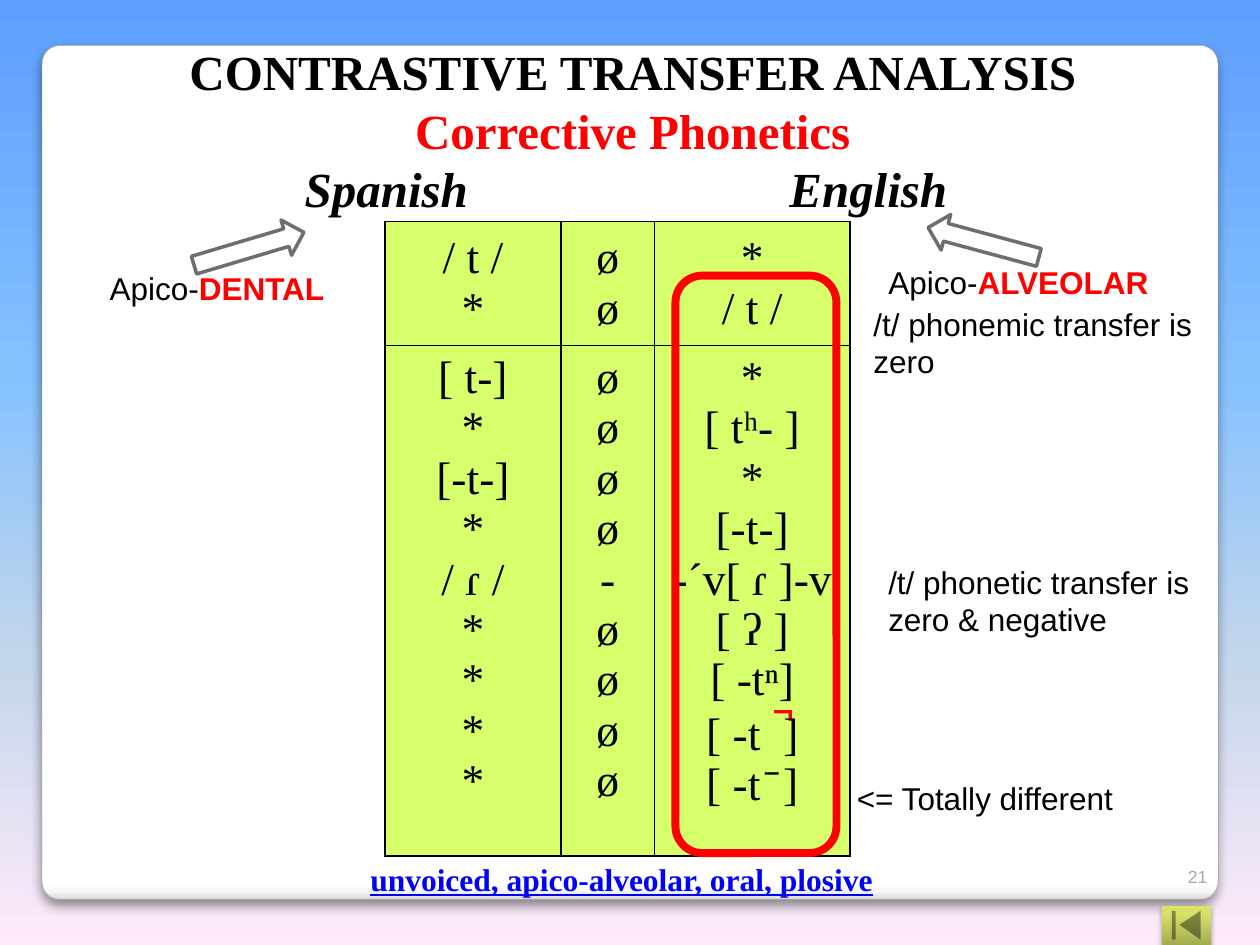
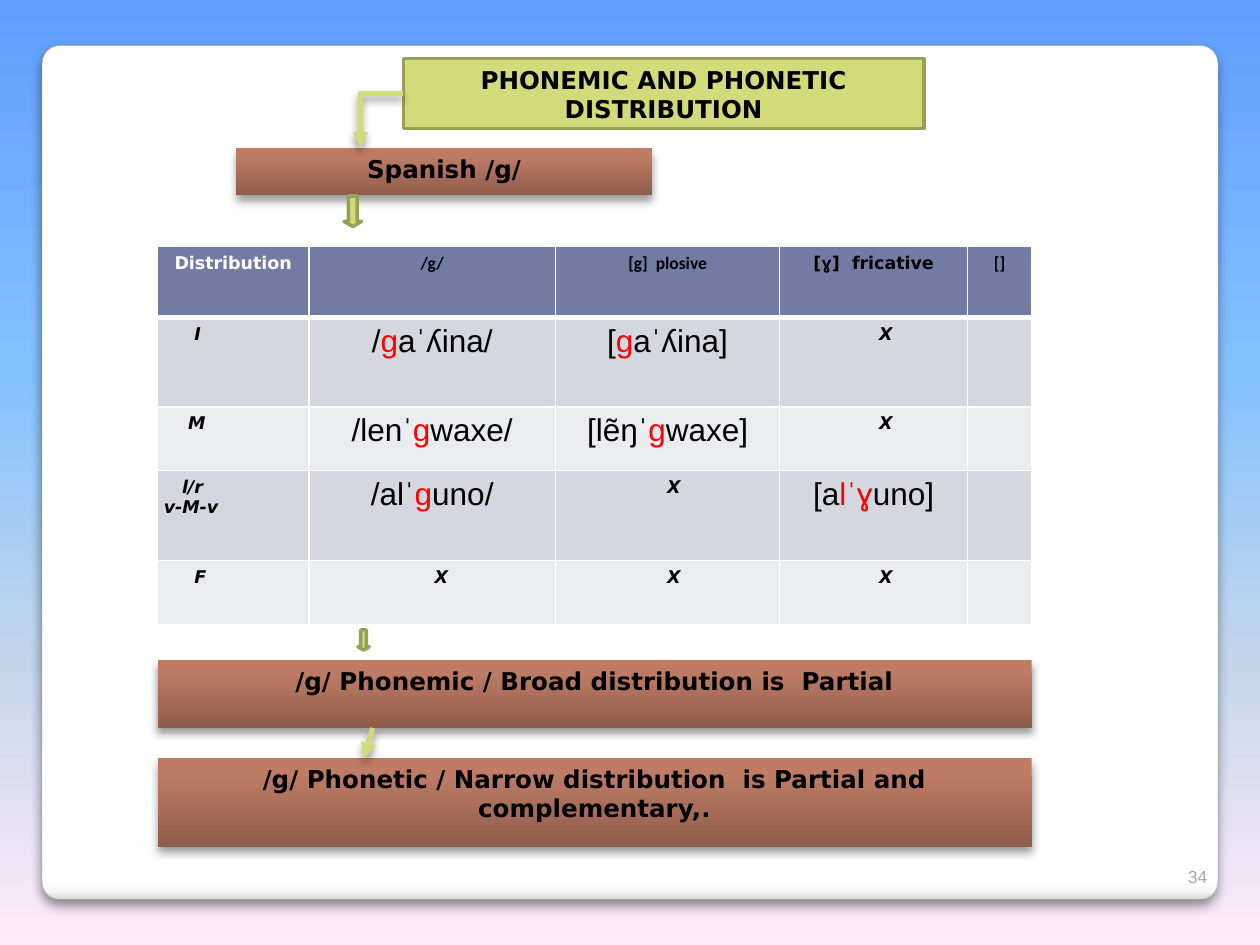
from lxml.etree import SubElement
from pptx import Presentation
from pptx.dml.color import RGBColor
from pptx.enum.shapes import MSO_CONNECTOR, MSO_SHAPE
from pptx.enum.text import MSO_ANCHOR, PP_ALIGN
from pptx.oxml import parse_xml
from pptx.oxml.ns import nsdecls, qn
from pptx.slide import Slide
from pptx.util import Pt

hex_color = RGBColor.from_string
BLACK, WHITE, RED, GRAY = "000000", "FFFFFF", "FF0000", "A1AAAC"
LIME, OLIVE, CELL_GREEN, HEADER_BLUE = "D2DA7A", "999F59", "D7FF6B", "727CA3"
SKY = [(0, "5E9EFF"), (40, "85C2FF"), (70, "C4D6EB"), (100, "FFEBFA")]
CARD = [(0, WHITE), (98, WHITE), (99, "F7F7F7"), (100, "D9D9D9")]
BROWN = [(0, "BF7B63"), (20, "BC7B64"), (100, "8F5D4C")]
BUTTON = [(0, "DAE466"), (20, "D7E168"), (100, "A3AB4F")]
SOFT_SHADOW = (40, 5, 3)
SERIF, SANS, WIDE = "Times New Roman", "Arial", "DejaVu Sans"
LEFT, CENTER, RIGHT = PP_ALIGN.LEFT, PP_ALIGN.CENTER, PP_ALIGN.RIGHT


def paint(target, fill=None, line=None, width=1, shadow=None, arrow=False):
    is_slide = isinstance(target, Slide)
    if isinstance(fill, list):
        fill_format = target.background.fill if is_slide else target.fill
        fill_format.gradient()
        fill_format.gradient_angle = 270
        stops = target.element.xpath(".//a:gsLst")[0]
        stops.clear()
        for position, color in fill:
            stop = SubElement(stops, qn("a:gs"), pos=str(position * 1000))
            SubElement(stop, qn("a:srgbClr"), val=color)
    elif fill:
        target.fill.solid()
        target.fill.fore_color.rgb = hex_color(fill)
    elif hasattr(target, "fill"):
        target.fill.background()
    if is_slide:
        return
    if line:
        target.line.color.rgb = hex_color(line)
        target.line.width = Pt(width)
    else:
        target.line.fill.background()
    properties = target.element.spPr
    if arrow:
        SubElement(properties.find(qn("a:ln")), qn("a:tailEnd"), type="triangle")
    effects = SubElement(properties, qn("a:effectLst"))
    if shadow:
        opacity, blur, distance = shadow
        outer = SubElement(effects, qn("a:outerShdw"), blurRad=str(Pt(blur)), dist=str(Pt(distance)),
                           dir="5400000", algn="t", rotWithShape="0")
        color = SubElement(outer, qn("a:srgbClr"), val=BLACK)
        SubElement(color, qn("a:alpha"), val=str(opacity * 1000))


def write(holder, lines, size, font, color=BLACK, bold=False, italic=False, align=CENTER,
          inset=3.6, anchor=MSO_ANCHOR.TOP, accent_bold=None):
    frame = holder.text_frame
    box = holder if hasattr(holder, "margin_left") else frame
    box.margin_left = box.margin_right = box.margin_top = box.margin_bottom = Pt(inset)
    box.vertical_anchor = anchor
    frame.word_wrap = True
    frame.text = "\n".join(lines)
    for paragraph, line in zip(frame.paragraphs, lines):
        paragraph.alignment = align
        paragraph.text = ""
        for index, part in enumerate(line.split("|")):
            if not part:
                continue
            accented = index % 2 == 1
            run = paragraph.add_run()
            run.text = part
            run.font.size = Pt(size)
            run.font.name = font
            run.font.italic = italic
            run.font.bold = accent_bold if accented and accent_bold is not None else bold
            run.font.color.rgb = hex_color(RED if accented else color)


presentation = Presentation()
presentation.slide_width, presentation.slide_height = Pt(720), Pt(540)
slides = []
for number in ("21", "34"):
    slide = presentation.slides.add_slide(presentation.slide_layouts[6])
    paint(slide, SKY)
    card = slide.shapes.add_shape(MSO_SHAPE.ROUNDED_RECTANGLE, Pt(24), Pt(26), Pt(672), Pt(488))
    card.adjustments[0] = 0.021
    paint(card, CARD, "A2A1A1", 0.25, (44, 6, 4))
    number_box = slide.shapes.add_textbox(Pt(657.5), Pt(492.5), Pt(36), Pt(18))
    write(number_box, [number], 10, SANS, GRAY, align=RIGHT, anchor=MSO_ANCHOR.BOTTOM)
    slides.append(slide)
transfer_slide, distribution_slide = slides

shapes = transfer_slide.shapes
button = shapes.add_shape(MSO_SHAPE.RECTANGLE, Pt(664), Pt(517.5), Pt(28), Pt(22.5))
paint(button, BUTTON, shadow=(35, 3, 1.8))
builder = shapes.build_freeform(Pt(674), Pt(528.5))
builder.add_line_segments([(Pt(686), Pt(520.5)), (Pt(686), Pt(537))])
builder.move_to(Pt(671.8), Pt(520.5))
builder.add_line_segments([(Pt(669.6), Pt(520.5)), (Pt(669.6), Pt(537)), (Pt(671.8), Pt(537))])
icon = builder.convert_to_shape()
paint(icon, BLACK)
SubElement(icon.element.xpath(".//a:solidFill/a:srgbClr")[0], qn("a:alpha"), val="40000")

transfer_rows = [
    (["/ t /", "*"], ["ø", "ø"], ["*", "/ t /"]),
    (["[ t-]", "*", "[-t-]", "*", "/ ɾ /", "*", "*", "*", "*"],
     ["ø", "ø", "ø", "ø", "-", "ø", "ø", "ø", "ø"],
     ["*", "[ tʰ- ]", "*", "[-t-]", "-´v[ ɾ ]-v", "[ ʔ ]", "[ -tⁿ]", "[ -t  |̚|]", "[ -t ̄ ]"]),
]
transfer_frame = shapes.add_table(2, 3, Pt(220), Pt(126.5), Pt(266), Pt(361.5))
transfer_table = transfer_frame.table
for row_index, row in enumerate(transfer_rows):
    for column_index, lines in enumerate(row):
        anchor = MSO_ANCHOR.TOP if row_index else MSO_ANCHOR.MIDDLE
        write(transfer_table.cell(row_index, column_index), lines, 26, SERIF, inset=4.3, anchor=anchor)
unreleased = transfer_table.cell(1, 2).text_frame.paragraphs[7].runs[1]
unreleased.font.size = Pt(28)
unreleased.font.name = SANS

title = shapes.add_textbox(Pt(45), Pt(20), Pt(633), Pt(131))
write(title, ["CONTRASTIVE TRANSFER ANALYSIS", "|Corrective Phonetics", "\tSpanish\tEnglish"],
      28, SERIF, bold=True, inset=7.2)
title.text_frame.margin_top = Pt(3.6)
languages = title.text_frame.paragraphs[2]
languages.alignment = LEFT
languages.runs[0].font.italic = True
tabs = SubElement(languages._p.get_or_add_pPr(), qn("a:tabLst"))
for position in (122, 399):
    SubElement(tabs, qn("a:tab"), pos=str(Pt(position)), algn="l")

for left, top, angle in ((131.8, 109.4, 73.4), (551.5, 105.8, 285.1)):
    pointer = shapes.add_shape(MSO_SHAPE.UP_ARROW, Pt(left), Pt(top), Pt(21), Pt(65.5))
    pointer.rotation = angle
    paint(pointer, WHITE, "6E6E6E", 2)

for text, left, top, width, height in (
    ("Apico-|DENTAL", 59, 150, 134, 29),
    ("Apico-|ALVEOLAR", 504, 147, 173.5, 29),
    ("/t/ phonemic transfer is zero", 495.5, 170.5, 204.5, 51),
    ("/t/ phonetic transfer is zero & negative", 504, 318, 204.5, 51),
    ("<= Totally different", 486, 441.5, 165, 29),
):
    note = shapes.add_textbox(Pt(left), Pt(top), Pt(width), Pt(height))
    write(note, [text], 18, SANS, align=LEFT, accent_bold=True)

highlight = shapes.add_shape(MSO_SHAPE.ROUNDED_RECTANGLE, Pt(386), Pt(157.5), Pt(92), Pt(330))
paint(highlight, line=RED, width=4.5)
features = shapes.add_textbox(Pt(204.5), Pt(488), Pt(312), Pt(29))
write(features, ["unvoiced, apico-alveolar, oral, plosive"], 18, SERIF, "0000FF", bold=True, align=LEFT)
features.text_frame.margin_left = Pt(7.2)
features.text_frame.word_wrap = False
features.text_frame.paragraphs[0].runs[0].font.underline = True

shapes = distribution_slide.shapes
for text, left, top, width, height in (
    ("PHONEMIC AND PHONETIC DISTRIBUTION", 230.5, 33.5, 297.5, 40),
    ("Spanish /g/", 135, 84.5, 237.5, 27),
    ("/g/ Phonemic / Broad distribution is  Partial", 90, 377, 499.5, 39),
    ("/g/ Phonetic / Narrow distribution  is Partial and complementary,.", 90, 433, 499.5, 51),
):
    band = shapes.add_shape(MSO_SHAPE.RECTANGLE, Pt(left), Pt(top), Pt(width), Pt(height))
    if text.startswith("PHONEMIC"):
        paint(band, LIME, OLIVE, 2)
    else:
        paint(band, BROWN, shadow=SOFT_SHADOW)
    write(band, [text], 14, WIDE, bold=True)

headings = ["Distribution", "/g/", "[g]  plosive", "[|ɣ|]  fricative", "[]"]
distribution_rows = [
    (["I"], "/|g|aˈʎina/", "[|g|aˈʎina]", "X"),
    (["M"], "/lenˈ|g|waxe/", "[lẽŋˈ|g|waxe]", "X"),
    (["l/r", "v-M-v"], "/alˈ|g|uno/", "X", "[a|lˈɣ|uno]"),
    (["F"], "X", "X", "X"),
]
position_indents = [17.4, 13.9, 10.4, 17.4]
mark_indents = [0, 10.4, 7, 13.9]
distribution_table = shapes.add_table(5, 5, Pt(90), Pt(141), Pt(499.5), Pt(216)).table
for column_index, heading in enumerate(headings):
    font = WIDE if column_index in (0, 3) else "Calibri"
    write(distribution_table.cell(0, column_index), [heading], 10, font,
          BLACK if column_index else WHITE, bold=True)
fricative = distribution_table.cell(0, 3).text_frame.paragraphs[0].runs[1]
fricative.font.name = "Courier New"
fricative.font.color.rgb = hex_color(BLACK)
for row_index, (positions, *examples) in enumerate(distribution_rows, 1):
    cell = distribution_table.cell(row_index, 0)
    write(cell, positions, 10, WIDE, bold=True, italic=True, align=LEFT)
    indent = position_indents[row_index - 1]
    cell.text_frame.paragraphs[0]._p.get_or_add_pPr().set("marL", str(Pt(indent)))
    for column_index, example in enumerate(examples, 1):
        cell = distribution_table.cell(row_index, column_index)
        if example == "X":
            write(cell, [example], 10, WIDE, bold=True, italic=True)
            properties = cell.text_frame.paragraphs[0]._p.get_or_add_pPr()
            properties.set("marL", str(Pt(mark_indents[column_index])))
        else:
            write(cell, [example], 18, SANS)

for table, border, row_fills, column_widths, row_heights in (
    (transfer_table, BLACK, [CELL_GREEN] * 2, [100.6, 53.5, 111.6], [47.5, 166.5]),
    (distribution_table, WHITE, [HEADER_BLUE] + ["D4D6E0", "EBECF0"] * 2,
     [86.5, 141, 128, 107.5, 36.5], [40.5, 51, 36.5, 51.5, 36.5]),
):
    table.first_row = table.horz_banding = False
    for column, width in zip(table.columns, column_widths):
        column.width = Pt(width)
    for row_index, row in enumerate(table.rows):
        row.height = Pt(row_heights[row_index])
        for cell in row.cells:
            cell.fill.solid()
            cell.fill.fore_color.rgb = hex_color(row_fills[row_index])
            for side_index, side in enumerate("LRTB"):
                under_header = row_index == 0 and side == "B" or row_index == 1 and side == "T"
                weight = 3 if table is distribution_table and under_header else 1
                cell._tc.get_or_add_tcPr().insert(side_index, parse_xml(
                    f'<a:ln{side} {nsdecls("a")} w="{Pt(weight)}"><a:solidFill>'
                    f'<a:srgbClr val="{border}"/></a:solidFill></a:ln{side}>'))
transfer_frame.height = Pt(361.5)

for left, top, width, height in ((196.6, 112, 10, 17.5), (204.5, 360, 6.5, 11.5)):
    step = shapes.add_shape(MSO_SHAPE.DOWN_ARROW, Pt(left), Pt(top), Pt(width), Pt(height))
    step.adjustments[1] = 0.3
    paint(step, LIME, OLIVE, 2)

link = shapes.add_connector(MSO_CONNECTOR.STRAIGHT, Pt(213), Pt(416), Pt(208), Pt(433.5))
paint(link, line=LIME, width=3, shadow=SOFT_SHADOW, arrow=True)
builder = shapes.build_freeform(Pt(230.5), Pt(53.3))
builder.add_line_segments([(Pt(206), Pt(53.3)), (Pt(206), Pt(84.5))], close=False)
paint(builder.convert_to_shape(), line=LIME, width=3, shadow=SOFT_SHADOW, arrow=True)

presentation.save("out.pptx")
